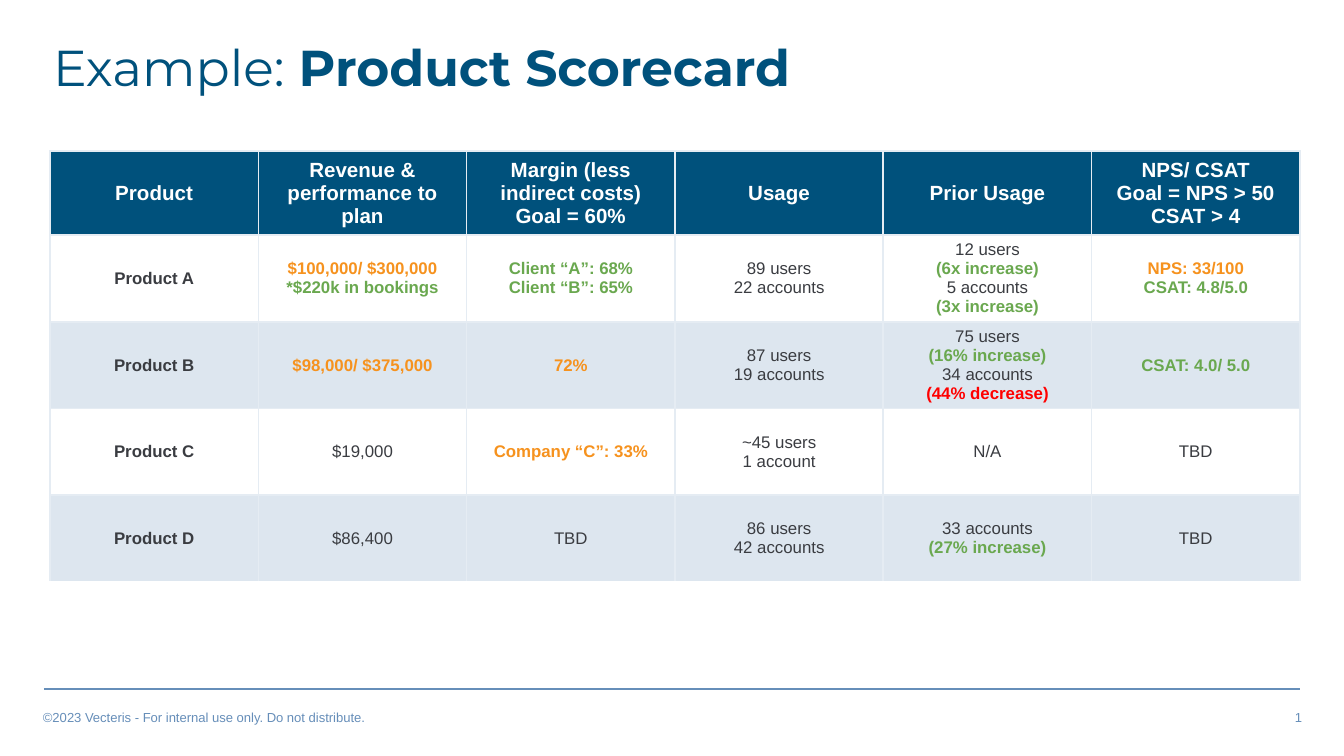
"""Build the product scorecard slide."""
from lxml import etree
from pptx import Presentation
from pptx.dml.color import RGBColor
from pptx.enum.shapes import MSO_CONNECTOR
from pptx.enum.text import MSO_ANCHOR, PP_ALIGN
from pptx.oxml.ns import qn
from pptx.util import Emu, Pt

NAVY = RGBColor(0x00, 0x51, 0x7C)
STEEL = RGBColor(0x66, 0x8E, 0xB9)
PALE = RGBColor(0xDD, 0xE6, 0xEF)
GRID = RGBColor(0xE5, 0xEC, 0xF3)
WHITE = RGBColor(0xFF, 0xFF, 0xFF)
INK = RGBColor(0x3A, 0x3C, 0x41)
ORANGE = RGBColor(0xF6, 0x92, 0x1E)
GREEN = RGBColor(0x6A, 0xA8, 0x4F)
RED = RGBColor(0xFF, 0x00, 0x00)

LEFT, CENTER, RIGHT = PP_ALIGN.LEFT, PP_ALIGN.CENTER, PP_ALIGN.RIGHT
TOP, MIDDLE = MSO_ANCHOR.TOP, MSO_ANCHOR.MIDDLE
STRAIGHT = MSO_CONNECTOR.STRAIGHT

TITLE = [("Example:", False), (" Product Scorecard", True)]
FOOTERS = [
    ("©2023 Vecteris - For internal use only. Do not distribute.", 34, LEFT),
    ("1", 773, RIGHT),
]
HEADERS = [
    ["Product"],
    ["Revenue & performance to plan"],
    ["Margin (less indirect costs)", "Goal = 60%"],
    ["Usage"],
    ["Prior Usage"],
    ["NPS/ CSAT", "Goal = NPS > 50", "CSAT > 4"],
]
# Plain strings are regular ink text; (text, colour) pairs are bold.
PRODUCTS = [
    [
        [("Product A", INK)],
        [("$100,000/ $300,000", ORANGE), ("*$220k in bookings", GREEN)],
        [("Client “A”: 68%", GREEN), ("Client “B”: 65%", GREEN)],
        ["89 users", "22 accounts"],
        ["12 users", ("(6x increase)", GREEN), "5 accounts", ("(3x increase)", GREEN)],
        [("NPS: 33/100", ORANGE), ("CSAT: 4.8/5.0", GREEN)],
    ],
    [
        [("Product B", INK)],
        [("$98,000/ $375,000", ORANGE)],
        [("72%", ORANGE)],
        ["87 users", "19 accounts"],
        ["75 users", ("(16% increase)", GREEN), "34 accounts", ("(44% decrease)", RED)],
        [("CSAT: 4.0/ 5.0", GREEN)],
    ],
    [
        [("Product C", INK)],
        ["$19,000"],
        [("Company “C”: 33%", ORANGE)],
        ["~45 users", "1 account"],
        ["N/A"],
        ["TBD"],
    ],
    [
        [("Product D", INK)],
        ["$86,400"],
        ["TBD"],
        ["86 users", "42 accounts"],
        ["33 accounts", ("(27% increase)", GREEN)],
        ["TBD"],
    ],
]
TABLE_LEFT, TABLE_TOP, TABLE_WIDTH = 50, 151, 1250
HEADER_HEIGHT, BODY_HEIGHT = 84, 346


def px(length):
    return Emu(round(length * 914400 / 134.4))


def set_font(font, name, size, color, bold=False):
    font.name, font.size, font.bold = name, Pt(size), bold
    font.color.rgb = color


def set_margins(holder, across, down):
    holder.margin_left = holder.margin_right = px(across)
    holder.margin_top = holder.margin_bottom = px(down)


def add_box(slide, left, top, width, height, anchor):
    box = slide.shapes.add_textbox(px(left), px(top), px(width), px(height))
    frame = box.text_frame
    frame.word_wrap = True
    frame.vertical_anchor = anchor
    set_margins(frame, 9, 5)
    return frame.paragraphs[0]


def set_borders(cell, bottom):
    properties = cell._tc.get_or_add_tcPr()
    for side, color in (("L", GRID), ("R", GRID), ("T", GRID), ("B", bottom)):
        line = etree.SubElement(properties, qn(f"a:ln{side}"), w=str(Pt(1)))
        fill = etree.SubElement(line, qn("a:solidFill"))
        etree.SubElement(fill, qn("a:srgbClr"), val=str(color))


def fill_cell(cell, lines, size, fill, bottom):
    set_borders(cell, bottom)
    cell.fill.solid()
    cell.fill.fore_color.rgb = fill
    cell.vertical_anchor = MIDDLE
    set_margins(cell, 7, 3)
    frame = cell.text_frame
    for index, line in enumerate(lines):
        bold = isinstance(line, tuple)
        text, color = line if bold else (line, INK)
        para = frame.add_paragraph() if index else frame.paragraphs[0]
        para.text, para.alignment = text, CENTER
        set_font(para.font, "Arial", size, color, bold)


def add_scorecard(slide):
    header = [[(line, WHITE) for line in lines] for lines in HEADERS]
    rows = [header] + PRODUCTS
    table = slide.shapes.add_table(
        len(rows), len(HEADERS), px(TABLE_LEFT), px(TABLE_TOP),
        px(TABLE_WIDTH), px(HEADER_HEIGHT + BODY_HEIGHT),
    ).table
    for column in table.columns:
        column.width = px(TABLE_WIDTH / len(HEADERS))
    for number, row in enumerate(rows):
        table.rows[number].height = px(BODY_HEIGHT / len(PRODUCTS) if number else HEADER_HEIGHT)
        size = 9 if number else 11
        fill = (PALE if number % 2 == 0 else WHITE) if number else NAVY
        bottom = WHITE if number == len(PRODUCTS) else GRID
        for column, lines in enumerate(row):
            fill_cell(table.cell(number, column), lines, size, fill, bottom)


def main():
    deck = Presentation()
    deck.slide_width, deck.slide_height = px(1344), px(756)
    slide = deck.slides.add_slide(deck.slide_layouts[6])

    rule = slide.shapes.add_connector(STRAIGHT, px(44), px(689), px(1300), px(689))
    rule.line.color.rgb, rule.line.width = STEEL, Pt(1)
    etree.SubElement(rule._element.spPr, qn("a:effectLst"))

    for text, left, alignment in FOOTERS:
        para = add_box(slide, left, 704, 538, 26, TOP)
        para.text, para.alignment = text, alignment
        set_font(para.font, "Arial", 7, STEEL)

    para = add_box(slide, 44, 32, 1040, 77, MIDDLE)
    para.line_spacing = 0.9
    for text, bold in TITLE:
        span = para.add_run()
        span.text = text
        set_font(span.font, "Montserrat", 27, NAVY, bold)

    add_scorecard(slide)
    deck.save("out.pptx")


if __name__ == "__main__":
    main()
